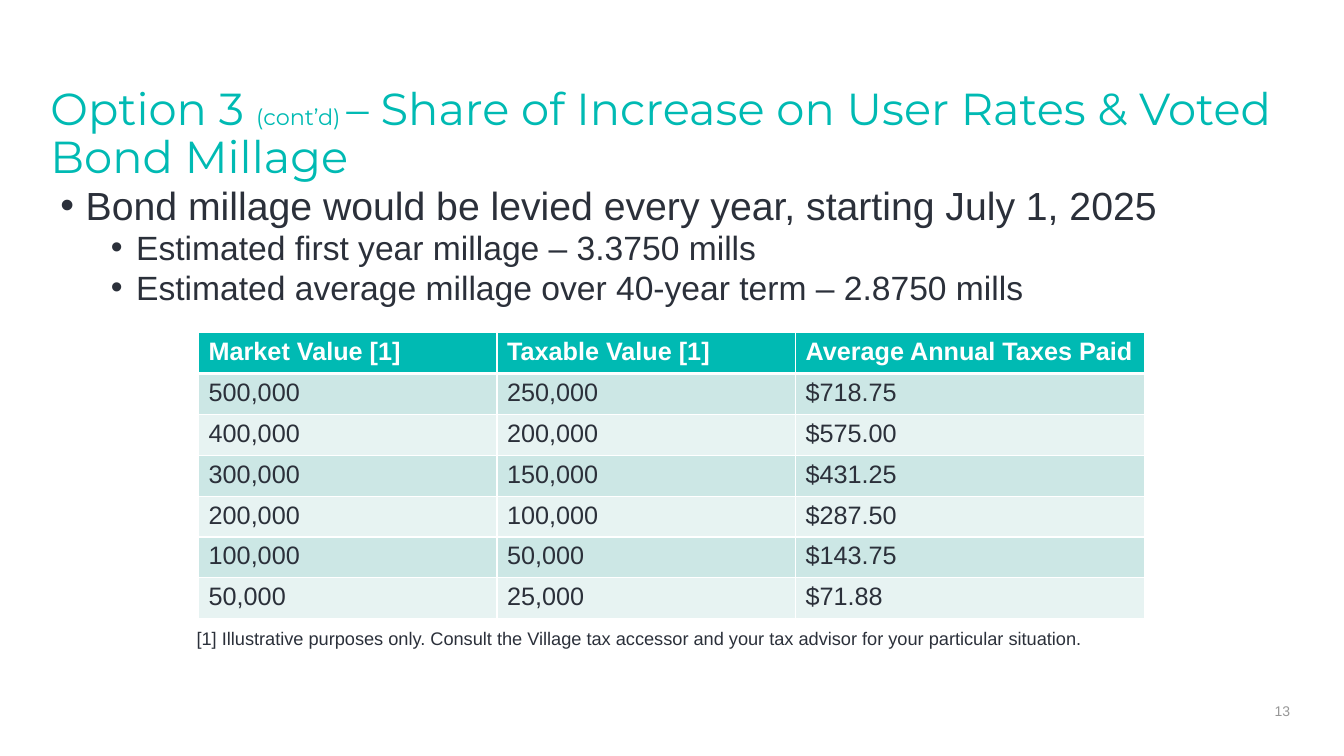
from lxml.etree import SubElement
from pptx import Presentation
from pptx.dml.color import RGBColor
from pptx.enum.text import MSO_ANCHOR, MSO_AUTO_SIZE, PP_ALIGN
from pptx.oxml.ns import qn
from pptx.util import Inches, Pt

TEAL, INK, WHITE, GRAY = "00BAB3", "2B303A", "FFFFFF", "979797"


def rgb(value):
    return RGBColor.from_string(value)


def add_run(p, text, size, color, name="Arial", bold=False):
    r = p.add_run()
    r.text = text
    r.font.color.rgb = rgb(color)
    for key, value in {"size": Pt(size), "name": name, "bold": bold}.items():
        setattr(r.font, key, value)


prs = Presentation()
prs.slide_width, prs.slide_height = Inches(13.33), Inches(7.5)
s = prs.slides.add_slide(prs.slide_layouts[1])
title, body = s.placeholders
note = s.shapes.add_textbox(0, 0, 0, 0)
number = s.shapes.add_textbox(0, 0, 0, 0)

frames = [
    (title, (0.5, 0.76, 12.33, 1.07), (0, 0.1, 0, 0), MSO_ANCHOR.TOP),
    (body, (0.5, 1.84, 12.33, 1.4), (0.1, 0.05, 0.1, 0.05), MSO_ANCHOR.TOP),
    (note, (1.95, 6.18, 9.4, 0.3), (0, 0, 0, 0), MSO_ANCHOR.MIDDLE),
    (number, (12.52, 6.97, 0.4, 0.17), (0, 0, 0, 0), MSO_ANCHOR.MIDDLE),
]
for sp, box, insets, anchor in frames:
    for key, value in zip(("left", "top", "width", "height"), box):
        setattr(sp, key, Inches(value))
    tf = sp.text_frame
    for key, value in zip(("left", "top", "right", "bottom"), insets):
        setattr(tf, f"margin_{key}", Inches(value))
    tf.word_wrap = True
    tf.auto_size = MSO_AUTO_SIZE.NONE
    tf.vertical_anchor = anchor

p = title.text_frame.paragraphs[0]
p.alignment = PP_ALIGN.LEFT
p.line_spacing = 0.9
for text, size in [
    ("Option 3 ", 32),
    ("(cont’d) ", 16),
    ("– Share of Increase on User Rates & Voted Bond Millage", 32),
]:
    add_run(p, text, size, TEAL, "Montserrat")

bullets = [
    ("Bond millage would be levied every year, starting July 1, 2025", 0, 28, 0),
    ("Estimated first year millage – 3.3750 mills", 1, 24, 5),
    ("Estimated average millage over 40-year term – 2.8750 mills", 1, 24, 5),
]
tf = body.text_frame
for i, (text, level, size, before) in enumerate(bullets):
    p = tf.paragraphs[0] if i == 0 else tf.add_paragraph()
    pPr = p._p.get_or_add_pPr()
    pPr.set("marL", str(Inches(0.25 + 0.5 * level)))
    pPr.set("indent", str(Inches(-0.25)))
    SubElement(pPr, qn("a:buFont"), typeface="Arial")
    SubElement(pPr, qn("a:buChar"), char="•")
    for key, value in {"level": level, "line_spacing": 0.8, "space_before": Pt(before)}.items():
        setattr(p, key, value)
    add_run(p, text, size, INK)

rows = [
    ("Market Value [1]", "Taxable Value [1]", "Average Annual Taxes Paid"),
    ("500,000", "250,000", "$718.75"),
    ("400,000", "200,000", "$575.00"),
    ("300,000", "150,000", "$431.25"),
    ("200,000", "100,000", "$287.50"),
    ("100,000", "50,000", "$143.75"),
    ("50,000", "25,000", "$71.88"),
]
table = s.shapes.add_table(
    len(rows), 3, Inches(1.97), Inches(3.3), Inches(9.38), Inches(2.84)
).table
for column, width in zip(table.columns, (2.96, 2.96, 3.46)):
    column.width = Inches(width)
for i, row in enumerate(rows):
    header = i == 0
    for j, text in enumerate(row):
        cell = table.cell(i, j)
        add_run(cell.text_frame.paragraphs[0], text, 18, WHITE if header else INK, bold=header)
        tcPr = cell._tc.get_or_add_tcPr()
        for side in ("L", "R", "T", "B"):
            thick = (i, side) in ((0, "B"), (1, "T"))
            ln = SubElement(tcPr, qn(f"a:ln{side}"), w=str(Pt(3 if thick else 1)))
            SubElement(SubElement(ln, qn("a:solidFill")), qn("a:srgbClr"), val=WHITE)
        cell.fill.solid()
        cell.fill.fore_color.rgb = rgb(TEAL if header else ("E7F3F2", "CCE7E5")[i % 2])

add_run(
    note.text_frame.paragraphs[0],
    "[1] Illustrative purposes only. Consult the Village tax accessor "
    "and your tax advisor for your particular situation.",
    13,
    INK,
)
p = number.text_frame.paragraphs[0]
p.alignment = PP_ALIGN.CENTER
add_run(p, "13", 10, GRAY)

prs.save("out.pptx")
